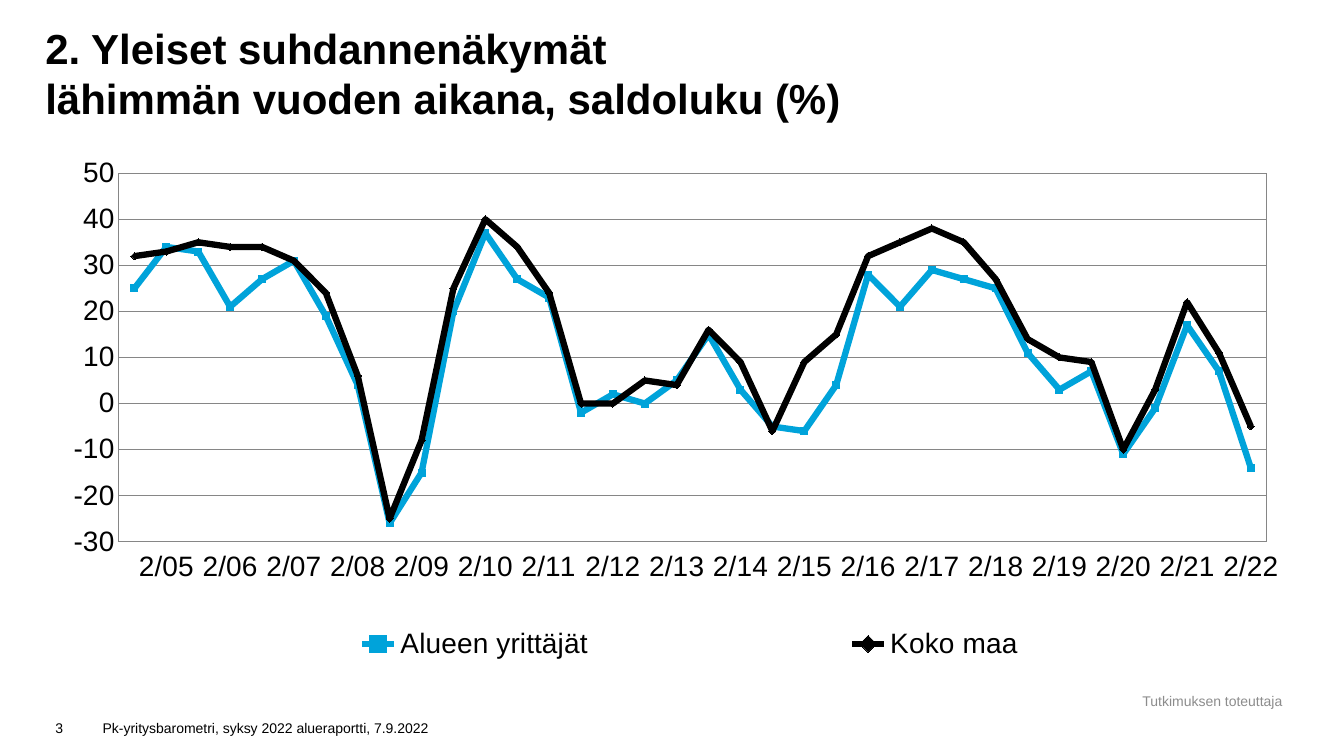
from lxml import etree
from pptx import Presentation
from pptx.chart.data import CategoryChartData
from pptx.dml.color import RGBColor
from pptx.enum.chart import XL_CHART_TYPE, XL_LEGEND_POSITION, XL_TICK_LABEL_POSITION, XL_TICK_MARK
from pptx.enum.text import MSO_ANCHOR, PP_ALIGN
from pptx.oxml import parse_xml
from pptx.oxml.ns import nsdecls, qn
from pptx.util import Inches, Pt

LINE = XL_CHART_TYPE.LINE
BELOW = XL_LEGEND_POSITION.BOTTOM
LOW = XL_TICK_LABEL_POSITION.LOW
NONE = XL_TICK_MARK.NONE
MIDDLE, BOTTOM = MSO_ANCHOR.MIDDLE, MSO_ANCHOR.BOTTOM
LEFT, CENTER = PP_ALIGN.LEFT, PP_ALIGN.CENTER

COLORS = {"black": "000000", "blue": "00A3DA", "note": "8C8C8C", "grid": "868686"}
SERIES = [
    ("Alueen yrittäjät", "blue",
     [25, 34, 33, 21, 27, 31, 19, 4, -26, -15, 20, 37, 27, 23, -2, 2, 0, 5,
      15, 3, -5, -6, 4, 28, 21, 29, 27, 25, 11, 3, 7, -11, -1, 17, 7, -14]),
    ("Koko maa", "black",
     [32, 33, 35, 34, 34, 31, 24, 6, -25, -8, 25, 40, 34, 24, 0, 0, 5, 4,
      16, 9, -6, 9, 15, 32, 35, 38, 35, 27, 14, 10, 9, -10, 3, 22, 11, -5]),
]


def paint(name):
    return RGBColor.from_string(COLORS[name])


def assign(item, values):
    for key, value in values.items():
        setattr(item, key, value)


def style(font, size, color="black", bold=False):
    assign(font, {"name": "Arial", "size": Pt(size), "bold": bold})
    font.color.rgb = paint(color)


def stroke(line, color, width):
    line.color.rgb = paint(color)
    line.width = Pt(width)


def add_text(slide, box, text, size, color="black", bold=False,
             anchor=BOTTOM, align=LEFT, inset=(0.1, 0.05)):
    frame = slide.shapes.add_textbox(*map(Inches, box)).text_frame
    side, edge = map(Inches, inset)
    assign(frame, {"word_wrap": True, "vertical_anchor": anchor,
                   "margin_left": side, "margin_right": side,
                   "margin_top": edge, "margin_bottom": edge})
    para = frame.paragraphs[0]
    para.text = text
    para.alignment = align
    for run in para.runs:
        style(run.font, size, color, bold)


def make_layout(box, inner=False):
    layout = etree.Element(qn("c:layout"))
    manual = etree.SubElement(layout, qn("c:manualLayout"))
    parts = [("layoutTarget", "inner")] if inner else []
    parts += [("xMode", "edge"), ("yMode", "edge")]
    parts += zip("xywh", map(str, box))
    for tag, value in parts:
        etree.SubElement(manual, qn("c:" + tag)).set("val", value)
    return layout


def set_layouts(chart):
    area = chart.element.find(".//" + qn("c:plotArea"))
    legend = chart.element.find(".//" + qn("c:legend"))
    for owner in (area, legend):
        for old in owner.findall(qn("c:layout")):
            owner.remove(old)
    area.insert(0, make_layout((0.059, 0.033, 0.926, 0.714), True))
    legend.insert(1, make_layout((0.05, 0.9, 0.94, 0.09)))
    area.append(parse_xml(
        f'<c:spPr {nsdecls("c", "a")}><a:noFill/><a:ln w="9525"><a:solidFill>'
        f'<a:srgbClr val="{COLORS["grid"]}"/></a:solidFill></a:ln></c:spPr>'))
    skip = etree.Element(qn("c:tickLblSkip"))
    skip.set("val", "1")
    area.find(qn("c:catAx")).find(qn("c:noMultiLvlLbl")).addprevious(skip)


def add_trend(slide, box):
    data = CategoryChartData(number_format="0")
    data.categories = [label for year in range(5, 23) for label in ("", f"2/{year:02}")]
    for name, _, values in SERIES:
        data.add_series(name, values)
    chart = slide.shapes.add_chart(LINE, *map(Inches, box), data).chart
    style(chart.font, 20)
    assign(chart, {"has_title": False, "has_legend": True})
    assign(chart.legend, {"position": BELOW, "include_in_layout": False})
    style(chart.legend.font, 20)
    chart.plots[0].vary_by_categories = False
    for series, (_, color, _) in zip(chart.plots[0].series, SERIES):
        series.smooth = False
        series.marker.style = None
        stroke(series.format.line, color, 4.5)
    for axis in (chart.category_axis, chart.value_axis):
        assign(axis, {"major_tick_mark": NONE, "minor_tick_mark": NONE})
        stroke(axis.format.line, "grid", 0.75)
        style(axis.tick_labels.font, 20)
    chart.category_axis.tick_label_position = LOW
    assign(chart.value_axis, {"minimum_scale": -30, "maximum_scale": 50,
                              "major_unit": 10, "has_major_gridlines": True})
    stroke(chart.value_axis.major_gridlines.format.line, "grid", 0.75)
    set_layouts(chart)


def add_footer(slide, box):
    left, top, width, height = box
    add_text(slide, (left, top, 0.47, height), "3", 10)
    add_text(slide, (left + 0.47, top, 4.17, height),
             "Pk-yritysbarometri, syksy 2022 alueraportti, 7.9.2022", 10)
    add_text(slide, (left + width - 1.59, top - 0.18, 1.73, 0.26),
             "Tutkimuksen toteuttaja", 10, "note", anchor=MIDDLE, align=CENTER)


def main():
    deck = Presentation()
    assign(deck, {"slide_width": Inches(13.33), "slide_height": Inches(7.5)})
    slide = deck.slides.add_slide(deck.slide_layouts[6])
    add_text(slide, (0.45, 0, 12.3, 1.22),
             "2. Yleiset suhdannenäkymät \vlähimmän vuoden aikana, saldoluku (%)",
             30, bold=True, inset=(0, 0))
    add_trend(slide, (0.45, 1.55, 12.3, 5.12))
    add_footer(slide, (0.45, 7, 12.3, 0.35))
    deck.save("out.pptx")


if __name__ == "__main__":
    main()
